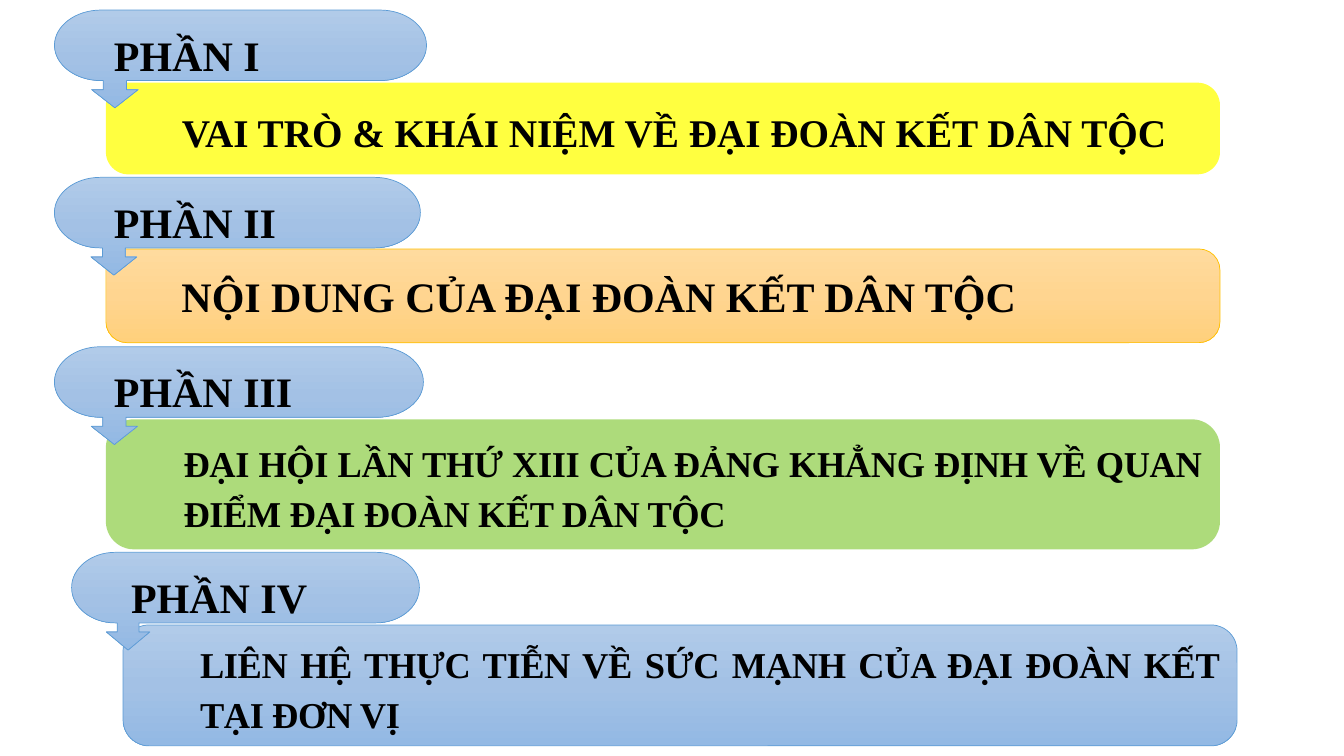
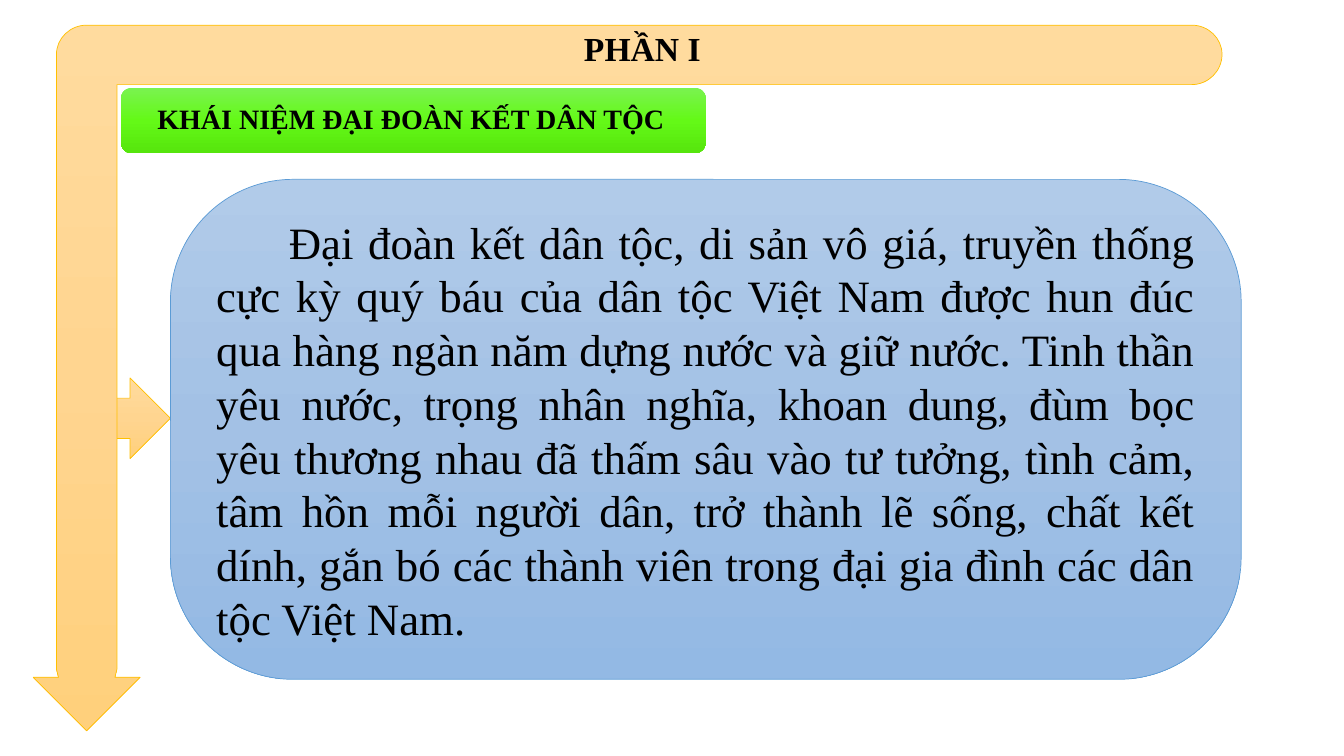
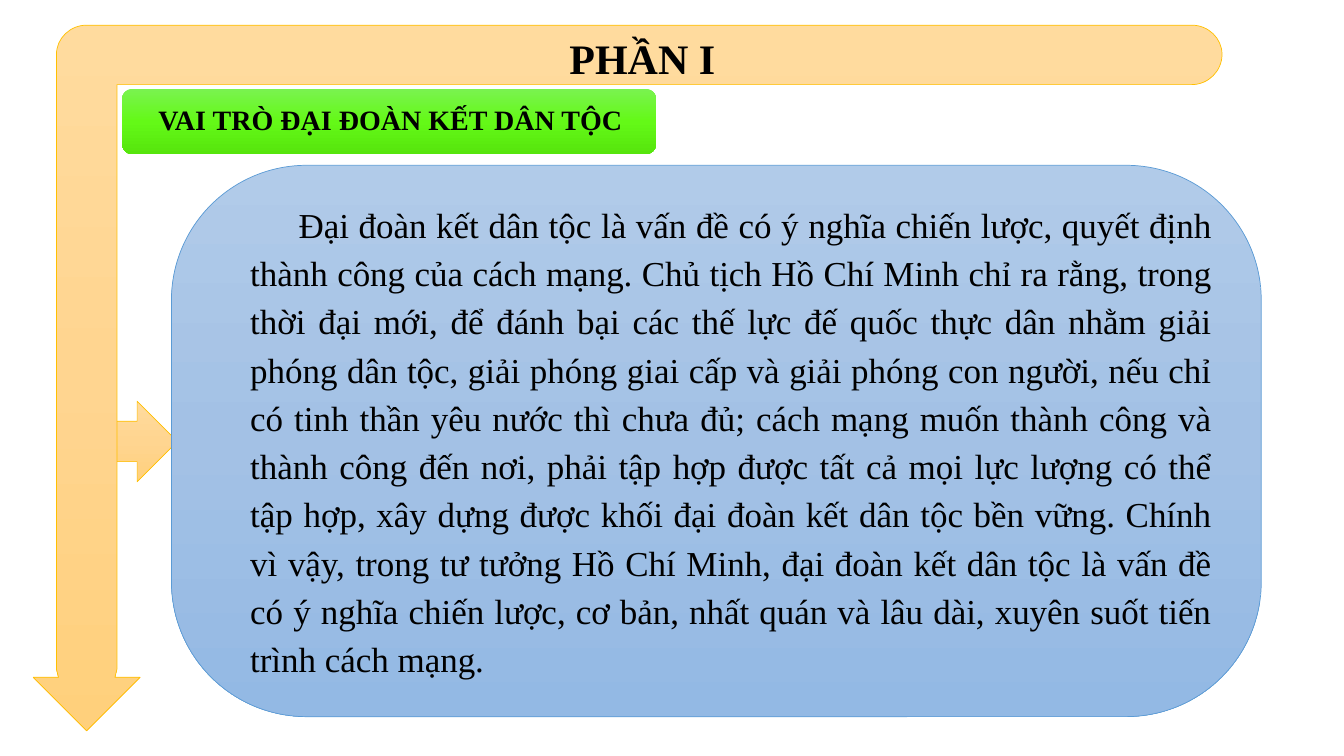
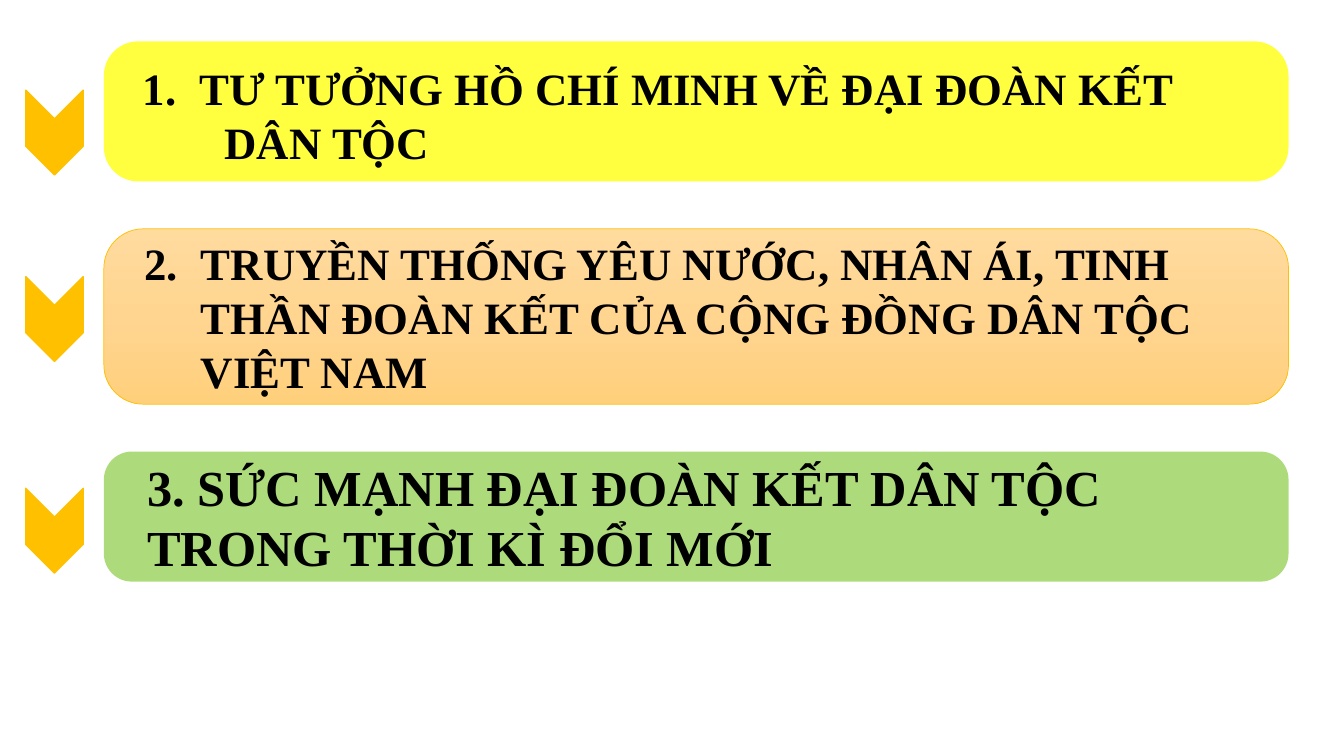
from copy import deepcopy

from pptx import Presentation
from pptx.dml.color import RGBColor
from pptx.enum.shapes import MSO_SHAPE
from pptx.enum.text import MSO_ANCHOR, MSO_AUTO_SIZE, PP_ALIGN
from pptx.oxml.ns import qn
from pptx.oxml.xmlchemy import OxmlElement
from pptx.util import Emu, Pt

# Shared look
EMU_PER_PX = 9144  # 100 px to the inch
FONT = "Times New Roman"
COLORS = {"text": "000000", "yellow": "FFFF00", "leaf": "92D050", "amber": "FFC000"}
GRADIENTS = {
    "blue": ("B1CBE9", "A3C1E5", "93B9E4"),
    "orange": ("FFDB9E", "FFD590", "FFD07C"),
    "green": ("7AF350", "64F917", "56E50D"),
}
LINES = {"blue": "5B9BD5", "orange": "FFC000", "amber": "FFC000"}
TITLE_ONLY, BLANK = 5, 6
ROUNDNESS = 0.55  # pull of a curve towards its corner
JUSTIFY, CENTER, LEFT = PP_ALIGN.JUSTIFY, PP_ALIGN.CENTER, PP_ALIGN.LEFT


def px(value):
    return Emu(round(value * EMU_PER_PX))


def rgb(value):
    return RGBColor.from_string(value)


# Fill, line and text
def paint(shape, style, alpha=None, line_width=0.5):
    """Apply a named gradient or flat colour, with its matching outline."""
    shape.shadow.inherit = False
    fill = shape.fill
    if style in GRADIENTS:
        fill.gradient()
        fill.gradient_angle = 270
        stop_list = shape._element.spPr.find(".//" + qn("a:gsLst"))
        stop_list.insert(1, deepcopy(stop_list[0]))
        for stop, color, position in zip(fill.gradient_stops, GRADIENTS[style], (0, 0.5, 1)):
            stop.color.rgb = rgb(color)
            stop.position = position
    else:
        fill.solid()
        fill.fore_color.rgb = rgb(COLORS[style])
    if alpha:
        opacity = OxmlElement("a:alpha")
        opacity.set("val", str(alpha * 1000))
        shape._element.spPr.find(".//" + qn("a:srgbClr")).append(opacity)
    if style in LINES:
        shape.line.color.rgb = rgb(LINES[style])
        shape.line.width = Pt(line_width)
    else:
        shape.line.fill.background()


def write(shape, text, size, bold=True, align=JUSTIFY, anchor=MSO_ANCHOR.MIDDLE,
          insets=(10, 5, 10, 5), left=0, indent=0, spacing=None, tracking=None,
          number=None, append=False):
    """Write one paragraph into a shape; append adds it after the others."""
    frame = shape.text_frame
    frame.word_wrap = True
    frame.auto_size = MSO_AUTO_SIZE.NONE
    frame.vertical_anchor = anchor
    (frame.margin_left, frame.margin_top,
     frame.margin_right, frame.margin_bottom) = map(px, insets)
    para = frame.add_paragraph() if append else frame.paragraphs[0]
    para.text = text
    para.alignment = align
    if spacing:
        para.line_spacing = spacing
    properties = para._p.get_or_add_pPr()
    properties.set("marL", str(px(left)))
    properties.set("indent", str(px(indent)))
    if number:
        bullet = OxmlElement("a:buAutoNum")
        bullet.set("type", "arabicPeriod")
        bullet.set("startAt", str(number))
        properties.append(bullet)
    for span in para.runs:
        font = span.font
        font.name, font.size, font.bold = FONT, Pt(size), bold
        font.color.rgb = rgb(COLORS["text"])
        if tracking:
            span._r.get_or_add_rPr().set("spc", str(tracking))


# Shapes
def add_preset(slide, kind, area, style, corner=None, rotation=0, **paint_format):
    shape = slide.shapes.add_shape(kind, *map(px, area))
    shape.rotation = rotation
    if corner:
        shape.adjustments[0] = corner
    paint(shape, style, **paint_format)
    return shape


def add_panel(slide, area, style, corner=0.245, alpha=None):
    return add_preset(slide, MSO_SHAPE.ROUNDED_RECTANGLE, area, style, corner, alpha=alpha)


def add_outline(slide, steps, style):
    """Draw a closed outline; a step (x, y, corner) bends round that corner."""
    points = [step[:2] for step in steps]
    builder = slide.shapes.build_freeform(*map(px, points[0]))
    builder.add_line_segments([tuple(map(px, point)) for point in points[1:]], close=True)
    shape = builder.convert_to_shape()
    segments = list(shape._element.spPr.find(".//" + qn("a:path")))
    for index, step in enumerate(steps):
        if len(step) == 3:
            bend(segments[index], shape, points[index - 1], step[:2], step[2])
    paint(shape, style)
    return shape


def bend(segment, shape, start, end, corner):
    """Replace a straight segment with a quarter-round curve."""
    curve = OxmlElement("a:cubicBezTo")
    controls = [tuple(a + (c - a) * ROUNDNESS for a, c in zip(point, corner))
                for point in (start, end)]
    for x, y in (*controls, end):
        point = OxmlElement("a:pt")
        point.set("x", str(px(x) - shape.left))
        point.set("y", str(px(y) - shape.top))
        curve.append(point)
    segment.getparent().replace(segment, curve)


def add_callout(slide, x, y, width, text):
    """Pill with a small arrow under it; its parts scale with the width."""
    radius, middle, right = width / 8, x + width * 0.1625, x + width
    shaft, head = width / 32, width / 16
    center, bottom, neck, tip = y + 35, y + 70, y + 79, y + 97
    steps = [
        (x + radius, y), (right - radius, y),
        (right, center, (right, y)), (right - radius, bottom, (right, bottom)),
        (middle + shaft, bottom), (middle + shaft, neck), (middle + head, neck),
        (middle, tip),
        (middle - head, neck), (middle - shaft, neck), (middle - shaft, bottom),
        (x + radius, bottom),
        (x, center, (x, bottom)), (x + radius, y, (x, y)),
    ]
    write(add_outline(slide, steps, "blue"), text, 30,
          anchor=MSO_ANCHOR.TOP, insets=(59, 19, 10, 5))


def add_arrow_frame(slide, text, size, spacing):
    """Top band that bends into a long arrow down the left side."""
    steps = [
        (86, 25), (1182, 25),
        (1212, 54, (1212, 25)), (1182, 84, (1212, 84)),
        (116, 84), (116, 664), (114, 672), (139, 672), (86, 725),
        (33, 672), (58, 672), (56, 664), (56, 54),
        (86, 25, (56, 25)),
    ]
    write(add_outline(slide, steps, "orange"), text, size, align=CENTER,
          anchor=MSO_ANCHOR.TOP, insets=(39, 7, 10, 5), spacing=spacing)


def add_heading(slide, x, y, width, text):
    """Green tab with the slide title on it."""
    add_panel(slide, (x, y, width, 65), "green", corner=0.167)
    title = slide.shapes.title
    title.left, title.top, title.width, title.height = map(px, (x + 7, y + 3, width - 7, 58))
    write(title, text, 20, align=LEFT, insets=(29, 0, 29, 0), spacing=0.9)
    slide.shapes._spTree.append(title._element)  # bring in front of the tab


# Slides
def add_slide(deck, layout):
    return deck.slides.add_slide(deck.slide_layouts[layout])


def build_outline_slide(deck):
    slide = add_slide(deck, BLANK)
    tight = {"size": 26, "spacing": 1.15, "tracking": -30}
    parts = [
        (54, 10, 369, "PHẦN I", 82, 91, "yellow", 0.245, 75,
         "VAI TRÒ & KHÁI NIỆM VỀ ĐẠI ĐOÀN KẾT DÂN TỘC", {"size": 28, "spacing": 1.15}),
        (54, 176, 363, "PHẦN II", 247, 93, "orange", 0.225, None,
         "NỘI DUNG CỦA ĐẠI ĐOÀN KẾT DÂN TỘC", {"size": 30}),
        (54, 344, 366, "PHẦN III", 416, 129, "leaf", 0.216, 75,
         "ĐẠI HỘI LẦN THỨ XIII CỦA ĐẢNG KHẲNG ĐỊNH VỀ QUAN ĐIỂM ĐẠI ĐOÀN KẾT DÂN TỘC", tight),
        (71, 548, 345, "PHẦN IV", 620, 120, "blue", 0.216, None,
         "LIÊN HỆ THỰC TIỄN VỀ SỨC MẠNH CỦA ĐẠI ĐOÀN KẾT TẠI ĐƠN VỊ", tight),
    ]
    for x, y, width, label, top, height, style, corner, alpha, text, text_format in parts:
        panel = add_panel(slide, (x + 51, top, 1105, height), style, corner, alpha)
        write(panel, text, left=59, **text_format)
        add_callout(slide, x, y, width, label)


def build_part_slide(deck, band, arrow, panel_area, heading, text, **text_format):
    slide = add_slide(deck, TITLE_ONLY)
    add_preset(slide, MSO_SHAPE.RIGHT_ARROW, (*arrow, 111, 80), "orange")
    add_arrow_frame(slide, "PHẦN I", *band)
    panel = add_panel(slide, panel_area, "blue")
    write(panel, text, bold=False, **text_format)
    add_heading(slide, *heading)


def build_content_slide(deck):
    slide = add_slide(deck, BLANK)
    gap, top = 47, 41
    numbered = {"size": 32, "left": 75, "indent": -56}
    lowered = (10, 11, 10, 5)
    rows = [
        (139, "yellow", 0.245, 75, 103, [
            ("TƯ TƯỞNG HỒ CHÍ MINH VỀ ĐẠI ĐOÀN KẾT",
             {"number": 1, "insets": lowered, **numbered}),
            ("DÂN TỘC", {"size": 32, "left": 100, "insets": lowered})]),
        (174, "orange", 0.225, None, 288, [
            ("TRUYỀN THỐNG YÊU NƯỚC, NHÂN ÁI, TINH THẦN ĐOÀN KẾT CỦA CỘNG ĐỒNG DÂN TỘC VIỆT NAM",
             {"number": 2, "align": LEFT, **numbered})]),
        (129, "leaf", 0.216, 75, 498, [
            ("3. SỨC MẠNH ĐẠI ĐOÀN KẾT DÂN TỘC TRONG THỜI KÌ ĐỔI MỚI",
             {"size": 36, "left": 25, "align": LEFT, "insets": (10, 5, 60, 5)})]),
    ]
    for height, style, corner, alpha, chevron_top, paragraphs in rows:
        panel = add_panel(slide, (103, top, 1175, height), style, corner, alpha)
        for index, (text, text_format) in enumerate(paragraphs):
            write(panel, text, append=index > 0, **text_format)
        add_preset(slide, MSO_SHAPE.CHEVRON, (12, chevron_top, 84, 57), "amber",
                   rotation=90, line_width=1)
        top += height + gap


def main():
    deck = Presentation()
    deck.slide_width, deck.slide_height = px(1333), px(750)
    build_outline_slide(deck)
    build_part_slide(
        deck, (24, 0.9), (58, 375), (169, 178, 1062, 496),
        (120, 87, 580, "KHÁI NIỆM ĐẠI ĐOÀN KẾT DÂN TỘC"),
        "Đại đoàn kết dân tộc, di sản vô giá, truyền thống cực kỳ quý báu của dân tộc "
        "Việt Nam được hun đúc qua hàng ngàn năm dựng nước và giữ nước. Tinh thần yêu nước, "
        "trọng nhân nghĩa, khoan dung, đùm bọc yêu thương nhau đã thấm sâu vào tư tưởng, "
        "tình cảm, tâm hồn mỗi người dân, trở thành lẽ sống, chất kết dính, gắn bó các "
        "thành viên trong đại gia đình các dân tộc Việt Nam.",
        size=32, indent=72)
    build_part_slide(
        deck, (30, None), (65, 398), (170, 164, 1081, 547),
        (121, 88, 530, "VAI TRÒ ĐẠI ĐOÀN KẾT DÂN TỘC"),
        "Đại đoàn kết dân tộc là vấn đề có ý nghĩa chiến lược, quyết định thành công của "
        "cách mạng. Chủ tịch Hồ Chí Minh chỉ ra rằng, trong thời đại mới, để đánh bại các "
        "thế lực đế quốc thực dân nhằm giải phóng dân tộc, giải phóng giai cấp và giải phóng "
        "con người, nếu chỉ có tinh thần yêu nước thì chưa đủ; cách mạng muốn thành công và "
        "thành công đến nơi, phải tập hợp được tất cả mọi lực lượng có thể tập hợp, xây dựng "
        "được khối đại đoàn kết dân tộc bền vững. Chính vì vậy, trong tư tưởng Hồ Chí Minh, "
        "đại đoàn kết dân tộc là vấn đề có ý nghĩa chiến lược, cơ bản, nhất quán và lâu dài, "
        "xuyên suốt tiến trình cách mạng.",
        size=25, left=29, indent=48, spacing=1.15, insets=(10, 5, 10, 10))
    build_content_slide(deck)
    deck.save("out.pptx")


if __name__ == "__main__":
    main()
